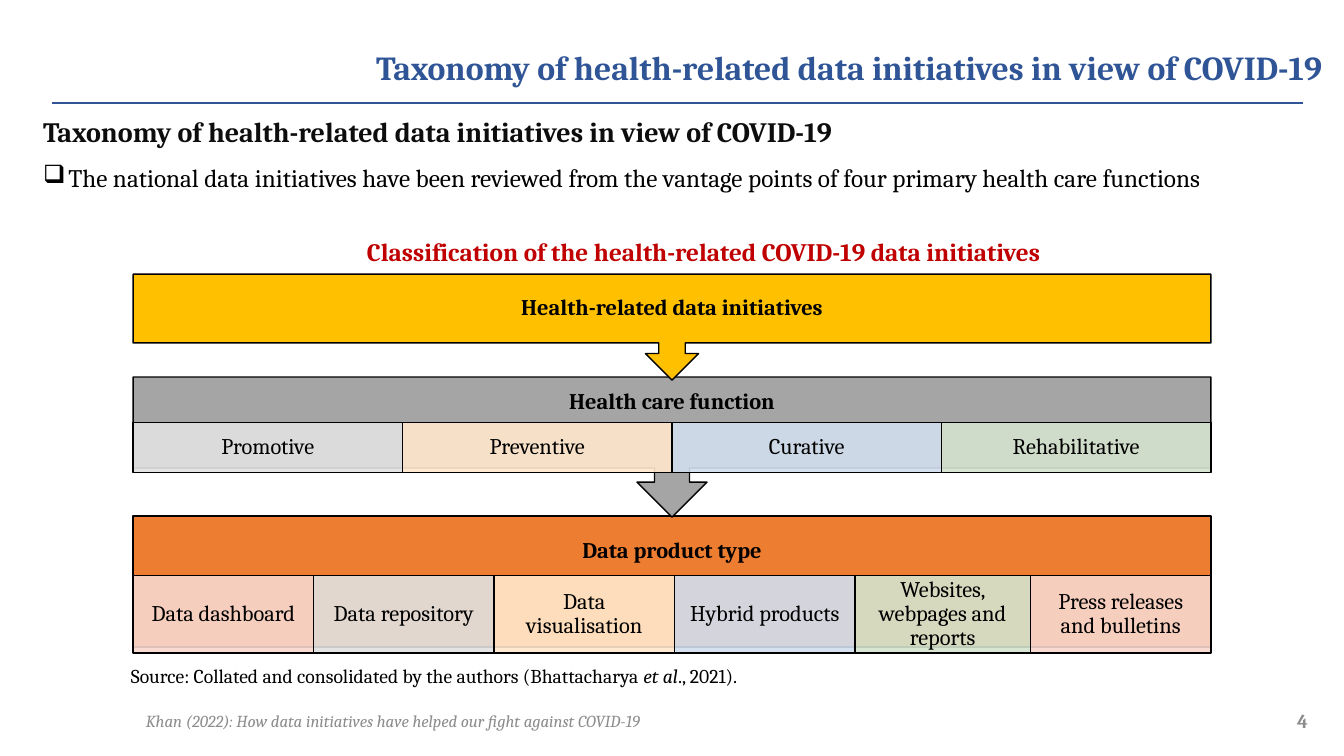
from lxml.etree import SubElement
from pptx import Presentation
from pptx.dml.color import RGBColor
from pptx.enum.shapes import MSO_CONNECTOR as CONNECTOR, MSO_SHAPE as SHAPE
from pptx.enum.text import MSO_ANCHOR as ANCHOR, PP_ALIGN as ALIGN
from pptx.oxml.ns import qn
from pptx.util import Inches, Pt

FONT = "Cambria"
HEADING = "Taxonomy of health-related data initiatives in view of COVID-19"
LEFT, WIDTH = 1.32, 10.69  # shared edges of the three bands

FUNCTIONS = [("Promotive", "E1E1E1"), ("Preventive", "FFE8CC"),
             ("Curative", "D2DEEF"), ("Rehabilitative", "D5E3CF")]
FUNCTION_WIDTHS = [WIDTH / len(FUNCTIONS)] * len(FUNCTIONS)
PRODUCTS = [("Data dashboard", "F8D7CE"), ("Data repository", "E1E1E1"),
            ("Data visualisation", "FFE8CC"), ("Hybrid products", "D2DEEF"),
            ("Websites, webpages and reports", "D5E3CF"),
            ("Press releases and bulletins", "F8D7CE")]
PRODUCT_WIDTHS = [1.79, 1.79, 1.79, 1.79, 1.74, 1.79]


def paint(color_format, color):
    color_format.rgb = RGBColor.from_string(color)


def write(paragraph, text, size=16, color="000000", bold=False, italic=False,
          align=ALIGN.LEFT, spacing=1.0, before=0):
    paragraph.alignment = align
    paragraph.line_spacing = spacing
    paragraph.space_before = Pt(before)
    run = paragraph.add_run()
    run.text = text
    run.font.name, run.font.size = FONT, Pt(size)
    run.font.bold, run.font.italic = bold, italic
    paint(run.font.color, color)


def add_frame(slide, left, top, width, height, anchor=ANCHOR.TOP):
    box = slide.shapes.add_textbox(Inches(left), Inches(top), Inches(width), Inches(height))
    frame = box.text_frame
    frame.word_wrap = True
    frame.vertical_anchor = anchor
    return frame


def add_block(slide, kind, left, top, width, height, fill, text,
              bold=False, inset=0.02, bottom=None, opacity=None):
    block = slide.shapes.add_shape(kind, Inches(left), Inches(top), Inches(width), Inches(height))
    block.shadow.inherit = False
    block.fill.solid()
    paint(block.fill.fore_color, fill)
    if opacity:
        color = block.fill._xPr.find(qn("a:solidFill"))[0]
        SubElement(color, qn("a:alpha"), val=str(opacity * 1000))
    paint(block.line.color, "000000")
    block.line.width = Pt(1)
    frame = block.text_frame
    frame.word_wrap = True
    frame.vertical_anchor = ANCHOR.MIDDLE
    frame.margin_left = frame.margin_right = Inches(0.12)
    frame.margin_top = Inches(inset)
    frame.margin_bottom = Inches(inset if bottom is None else bottom)
    write(frame.paragraphs[0], text, bold=bold, align=ALIGN.CENTER, spacing=0.9)


def add_band(slide, kind, top, height, fill, text, bottom=0.12):
    add_block(slide, kind, LEFT, top, WIDTH, height, fill, text,
              bold=True, inset=0.12, bottom=bottom)


def add_cells(slide, top, height, cells, widths):
    left = LEFT
    for (text, fill), width in zip(cells, widths):
        add_block(slide, SHAPE.RECTANGLE, left, top, width, height, fill, text, opacity=90)
        left += width


def add_rule(slide, left, right, y, color):
    rule = slide.shapes.add_connector(CONNECTOR.STRAIGHT, Inches(left), Inches(y),
                                      Inches(right), Inches(y))
    paint(rule.line.color, color)
    rule.line.width = Pt(1.5)
    SubElement(rule._element.spPr, qn("a:effectLst"))


def indent(paragraph, left, first=0, bullet=None):
    properties = paragraph._p.get_or_add_pPr()
    properties.set("marL", str(Inches(left)))
    properties.set("indent", str(Inches(first)))
    if bullet:
        SubElement(properties, qn("a:buChar"), char=bullet)


def add_title(slide):
    title = slide.shapes.title
    title.left, title.top = Inches(2.09), Inches(0.36)
    title.width, title.height = Inches(11.12), Inches(0.66)
    title.text_frame.vertical_anchor = ANCHOR.MIDDLE
    write(title.text_frame.paragraphs[0], HEADING, size=24, color="2F5597",
          bold=True, align=ALIGN.RIGHT, spacing=0.9)


def add_introduction(slide):
    frame = add_frame(slide, 0.33, 1.12, 12.8, 1.6)
    write(frame.paragraphs[0], HEADING, size=20, color="0D0D0D", bold=True, spacing=0.9)
    review = frame.add_paragraph()
    write(review, "The national data initiatives have been reviewed from the vantage "
          "points of four primary health care functions",
          size=18, align=ALIGN.JUSTIFY, before=10)
    indent(review, 0.25, -0.25, "❑")
    chart_heading = frame.add_paragraph()
    write(chart_heading, "Classification of the health-related COVID-19 data initiatives",
          size=18, color="C00000", bold=True, align=ALIGN.CENTER, before=31.5)
    indent(chart_heading, 0.5)


def add_classification(slide):
    # Lowest band first, so each arrow tip lies over the band below it
    add_band(slide, SHAPE.RECTANGLE, 5.12, 1.3, "ED7D31", "Data product type", bottom=0.72)
    add_cells(slide, 5.71, 0.77, PRODUCTS, PRODUCT_WIDTHS)
    add_band(slide, SHAPE.DOWN_ARROW_CALLOUT, 3.74, 1.39, "A5A5A5",
             "Health care function", bottom=0.53)
    add_cells(slide, 4.19, 0.5, FUNCTIONS, FUNCTION_WIDTHS)
    add_band(slide, SHAPE.DOWN_ARROW_CALLOUT, 2.72, 1.05, "FFC000",
             "Health-related data initiatives")


def add_source_and_footer(slide):
    source = add_frame(slide, 1.2, 6.5, 8.5, 0.35).paragraphs[0]
    for text, italic in [("Source: Collated and consolidated by the authors (Bhattacharya ", False),
                         ("et al", True), ("., 2021).", False)]:
        write(source, text, size=14, italic=italic, spacing=1.15)
    footer = add_frame(slide, 0.36, 6.95, 7.08, 0.4, ANCHOR.MIDDLE)
    write(footer.paragraphs[0],
          "Khan (2022): How data initiatives have helped our fight against COVID-19",
          size=12, color="8C8C8C", italic=True, align=ALIGN.CENTER)
    number = add_frame(slide, 10.07, 6.95, 3, 0.4, ANCHOR.MIDDLE)
    write(number.paragraphs[0], "4", size=14, color="8C8C8C", bold=True, align=ALIGN.RIGHT)


def main():
    deck = Presentation()
    deck.slide_width, deck.slide_height = Inches(13.33), Inches(7.5)
    slide = deck.slides.add_slide(deck.slide_layouts[5])
    # Heading
    add_rule(slide, 0.52, 12.92, 1.02, "2F5597")
    add_title(slide)
    add_introduction(slide)
    # Diagram
    add_classification(slide)
    # Credits
    add_source_and_footer(slide)
    deck.save("out.pptx")


if __name__ == "__main__":
    main()
